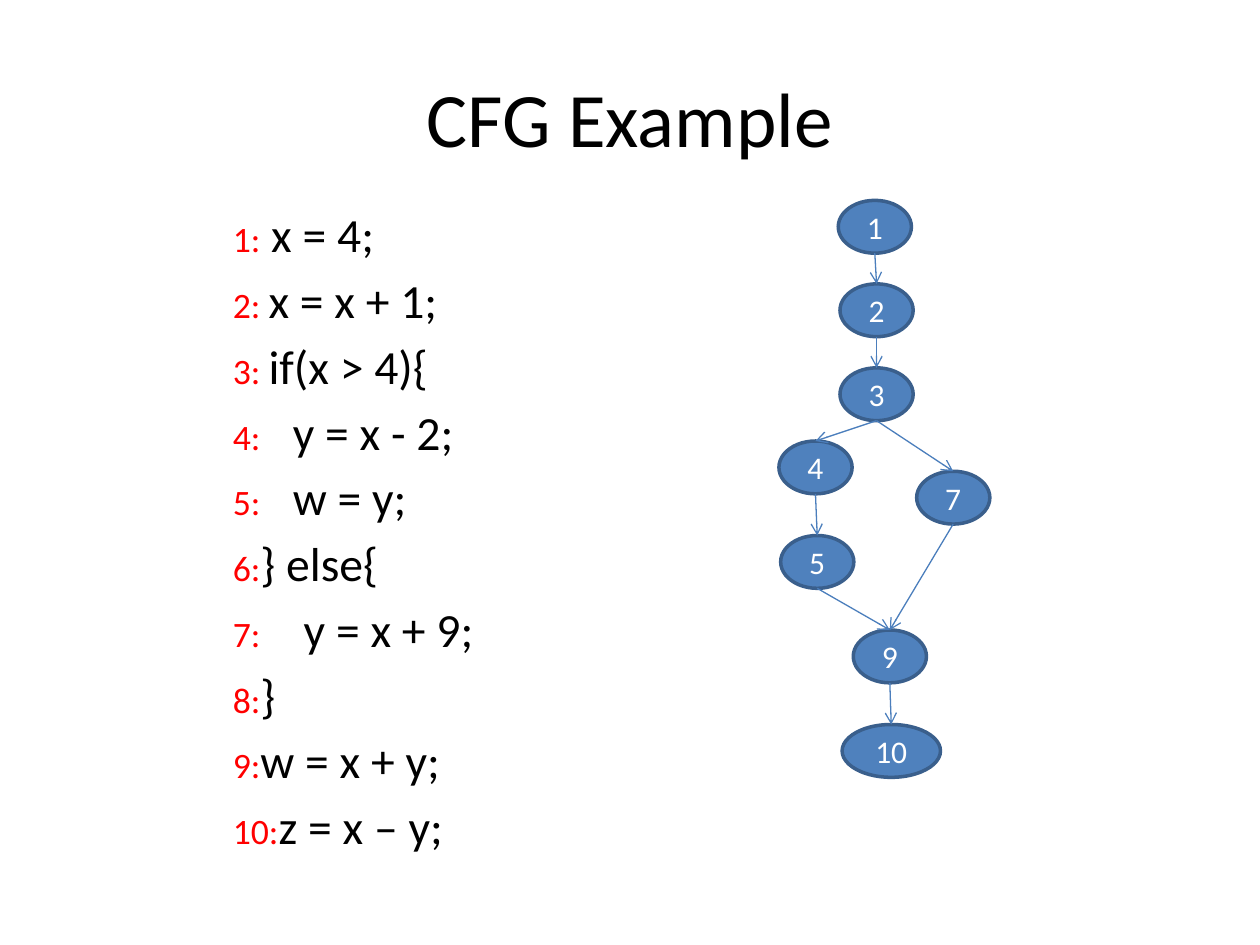
from dataclasses import dataclass

from lxml import etree
from pptx import Presentation
from pptx.dml.color import RGBColor
from pptx.enum import shapes, text
from pptx.oxml import ns
from pptx.util import Pt


@dataclass(frozen=True)
class Theme:
    """Colours, font and type sizes of the slide."""
    font: str = "Calibri"
    ink: str = "000000"
    number: str = "FF0000"
    node_fill: str = "4F81BD"
    node_line: str = "3A5F8C"
    node_text: str = "FFFFFF"
    arrow: str = "4B7EBC"
    title_size: float = 44
    number_size: float = 20.4
    code_size: float = 27.2
    node_size: float = 18


THEME = Theme()
NODE_WIDTH, WIDE_NODE, NODE_HEIGHT = 41.8, 56.2, 30.2

CODE = [
    ("1:", " x = 4;", 0),
    ("2: ", "x = x + 1;", 0),
    ("3: ", "if(x > 4){", 0),
    ("4:", "y = x - 2;", 34.3),
    ("5:", "w = y;", 34.3),
    ("6:", "} else{", 0),
    ("7:", "y = x + 9;", 40.5),
    ("8:", "}", 0),
    ("9:", "w = x + y;", 0),
    ("10:", "z = x – y;", 0),
]

NODES = {
    "1": (54.9, 0),
    "2": (55.9, 47.7),
    "3": (55.9, 95.7),
    "4": (21, 137.5),
    "5": (22, 191.5),
    "7": (99.7, 154.8),
    "9": (63.5, 245.5),
    "10": (64.3, 299.5),
}
EDGES = [("1", "2"), ("2", "3"), ("3", "4"), ("3", "7"), ("4", "5"),
         ("7", "9"), ("5", "9"), ("9", "10")]


def add_run(paragraph, words, size, colour):
    """Append one formatted run."""
    run = paragraph.add_run()
    run.text = words
    run.font.name = THEME.font
    run.font.size = Pt(size)
    run.font.color.rgb = RGBColor.from_string(colour)


def set_tab(paragraph, position):
    """Give the paragraph one left tab stop."""
    properties = paragraph._p.get_or_add_pPr()
    stops = etree.SubElement(properties, ns.qn("a:tabLst"))
    etree.SubElement(stops, ns.qn("a:tab"), pos=str(Pt(position)), algn="l")


def place_title(slide, box):
    """Move and format the title placeholder."""
    title = slide.shapes.title
    title.left, title.top, title.width, title.height = map(Pt, box)
    frame = title.text_frame
    frame.vertical_anchor = text.MSO_ANCHOR.MIDDLE
    paragraph = frame.paragraphs[0]
    paragraph.alignment = text.PP_ALIGN.CENTER
    add_run(paragraph, "CFG Example", THEME.title_size, THEME.ink)


def place_code(slide, box):
    """Write the numbered program listing."""
    frame = slide.shapes.add_textbox(*map(Pt, box)).text_frame
    frame.word_wrap = True
    for index, (number, code, indent) in enumerate(CODE):
        paragraph = frame.add_paragraph() if index else frame.paragraphs[0]
        paragraph.space_before = Pt(4.9)
        if indent:
            set_tab(paragraph, indent)
        add_run(paragraph, number, THEME.number_size, THEME.number)
        add_run(paragraph, "\t" + code if indent else code,
                THEME.code_size, THEME.ink)


def add_node(slide, label, centre, top):
    """Draw one flow-graph node centred on a column."""
    width = WIDE_NODE if len(label) > 1 else NODE_WIDTH
    node = slide.shapes.add_shape(
        shapes.MSO_SHAPE.OVAL, Pt(centre - width / 2), Pt(top), Pt(width), Pt(NODE_HEIGHT))
    node.shadow.inherit = False
    node.fill.solid()
    node.fill.fore_color.rgb = RGBColor.from_string(THEME.node_fill)
    node.line.color.rgb = RGBColor.from_string(THEME.node_line)
    node.line.width = Pt(2)
    frame = node.text_frame
    frame.margin_left = frame.margin_right = frame.margin_top = frame.margin_bottom = 0
    frame.vertical_anchor = text.MSO_ANCHOR.MIDDLE
    paragraph = frame.paragraphs[0]
    paragraph.alignment = text.PP_ALIGN.CENTER
    add_run(paragraph, label, THEME.node_size, THEME.node_text)


def add_arrow(slide, start, end):
    """Draw a thin open-headed arrow."""
    arrow = slide.shapes.add_connector(
        shapes.MSO_CONNECTOR.STRAIGHT, *map(Pt, (*start, *end)))
    arrow.line.color.rgb = RGBColor.from_string(THEME.arrow)
    arrow.line.width = Pt(0.75)
    etree.SubElement(arrow.line._get_or_add_ln(), ns.qn("a:tailEnd"), type="arrow")
    etree.SubElement(arrow._element.spPr, ns.qn("a:effectLst"))


def place_graph(slide, box):
    """Draw the control-flow graph from the box's top left corner."""
    left, top = box[:2]
    tops = {label: (left + x, top + y) for label, (x, y) in NODES.items()}
    for label, (centre, node_top) in tops.items():
        add_node(slide, label, centre, node_top)
    for source, target in EDGES:
        centre, node_top = tops[source]
        add_arrow(slide, (centre, node_top + NODE_HEIGHT), tops[target])


def main():
    """Build and save the slide."""
    presentation = Presentation()
    presentation.slide_width, presentation.slide_height = Pt(720), Pt(540)
    slide = presentation.slides.add_slide(presentation.slide_layouts[5])
    place_title(slide, (36, 21.6, 648, 90))
    place_code(slide, (126, 113.8, 216, 396))
    place_graph(slide, (445, 114.5, 121, 330))
    presentation.save("out.pptx")


if __name__ == "__main__":
    main()
